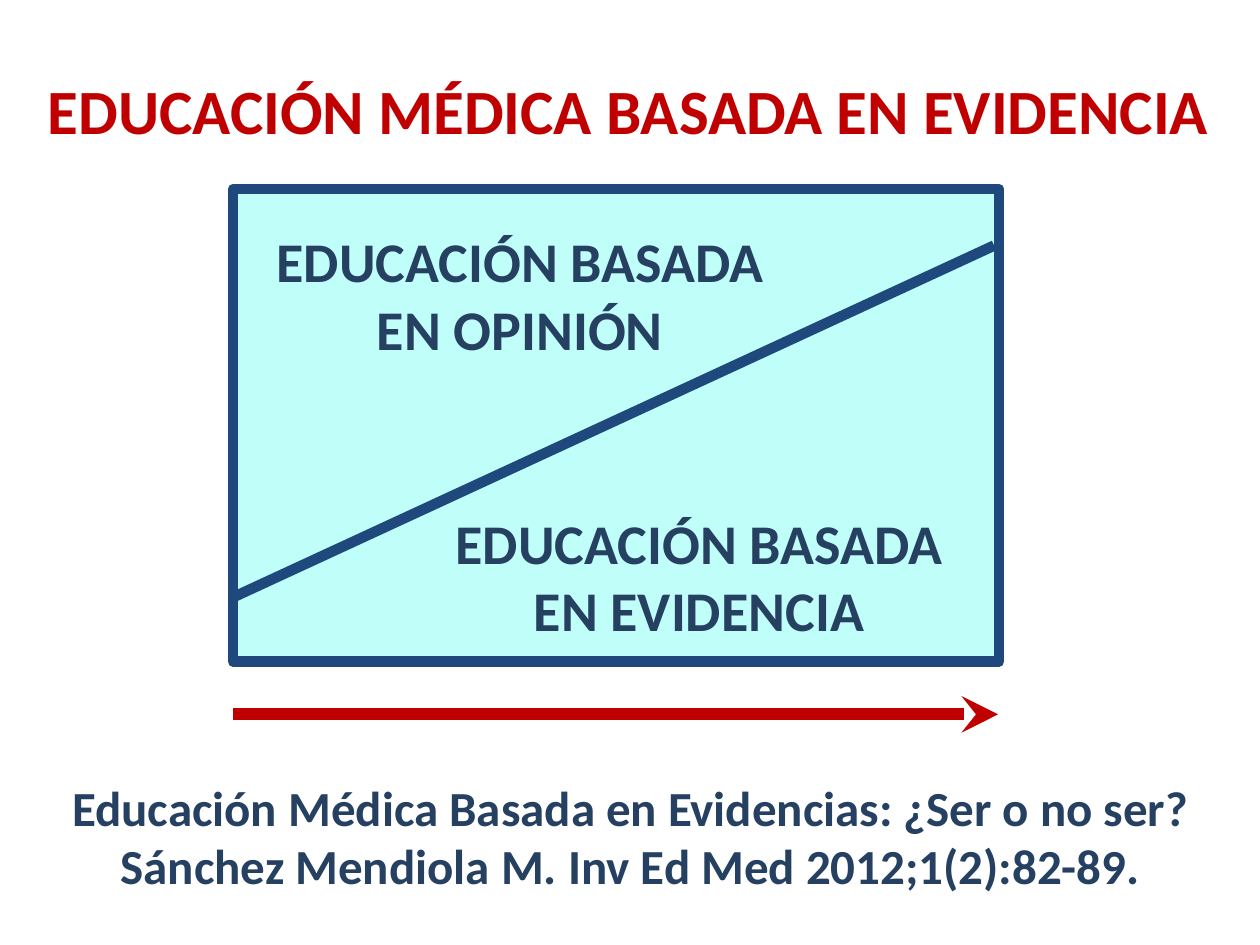
from lxml.etree import SubElement
from pptx import Presentation
from pptx.dml.color import RGBColor
from pptx.enum.shapes import MSO_CONNECTOR, MSO_SHAPE
from pptx.enum.text import MSO_ANCHOR, MSO_AUTO_SIZE, PP_ALIGN
from pptx.oxml.ns import qn
from pptx.util import Cm, Pt

RED = RGBColor(0xC0, 0x00, 0x00)
BLUE = RGBColor(0x1F, 0x49, 0x7D)
NAVY = RGBColor(0x25, 0x40, 0x61)
AQUA = RGBColor(0xC0, 0xFE, 0xF9)
FONT = "Calibri"

TITLE = ("EDUCACIÓN MÉDICA BASADA EN EVIDENCIA", (0.71, 1.32, 24.16, 1.8))
PANEL = (4.7, 3.81, 15.44, 9.53)
LABELS = [
    ("EDUCACIÓN BASADA\nEN OPINIÓN", (5.28, 4.45, 10.41, 3), 32),
    ("EDUCACIÓN BASADA\nEN EVIDENCIA", (8.89, 10.13, 10.41, 3), 32),
    ("Educación Médica Basada en Evidencias: ¿Ser o no ser?\n"
     "Sánchez Mendiola M. Inv Ed Med 2012;1(2):82-89.",
     (0.71, 15.54, 23.98, 2.64), 28),
]
DIVIDER = (4.7, 12.04, 20.04, 4.95)
ARROW = (4.7, 14.4, 20.12, 14.4)


def lengths(values):
    return [Cm(value) for value in values]


def write_text(shape, text, size, color, alignment):
    text_frame = shape.text_frame
    text_frame.text = text
    text_frame.word_wrap = False
    text_frame.auto_size = MSO_AUTO_SIZE.SHAPE_TO_FIT_TEXT
    text_frame.vertical_anchor = MSO_ANCHOR.TOP
    for paragraph in text_frame.paragraphs:
        paragraph.alignment = alignment
        for run in paragraph.runs:
            run.font.name = FONT
            run.font.size = Pt(size)
            run.font.bold = True
            run.font.color.rgb = color


def add_line(slide, ends, color, width):
    connector = slide.shapes.add_connector(MSO_CONNECTOR.STRAIGHT, *lengths(ends))
    connector.line.color.rgb = color
    connector.line.width = Pt(width)
    SubElement(connector._element.spPr, qn("a:effectLst"))
    return connector


def main():
    presentation = Presentation()
    presentation.slide_width, presentation.slide_height = Cm(25.4), Cm(19.05)
    slide = presentation.slides.add_slide(presentation.slide_layouts[5])

    title = slide.shapes.title
    text, box = TITLE
    title.left, title.top, title.width, title.height = lengths(box)
    write_text(title, text, 36, RED, PP_ALIGN.LEFT)

    panel = slide.shapes.add_shape(MSO_SHAPE.RECTANGLE, *lengths(PANEL))
    panel.shadow.inherit = False
    panel.fill.solid()
    panel.fill.fore_color.rgb = AQUA
    panel.line.color.rgb = BLUE
    panel.line.width = Pt(6)

    add_line(slide, DIVIDER, BLUE, 6)
    for text, box, size in LABELS:
        label = slide.shapes.add_textbox(*lengths(box))
        write_text(label, text, size, NAVY, PP_ALIGN.CENTER)

    arrow = add_line(slide, ARROW, RED, 7)
    SubElement(arrow.line._get_or_add_ln(), qn("a:tailEnd"), type="stealth")

    presentation.save("out.pptx")


if __name__ == "__main__":
    main()
